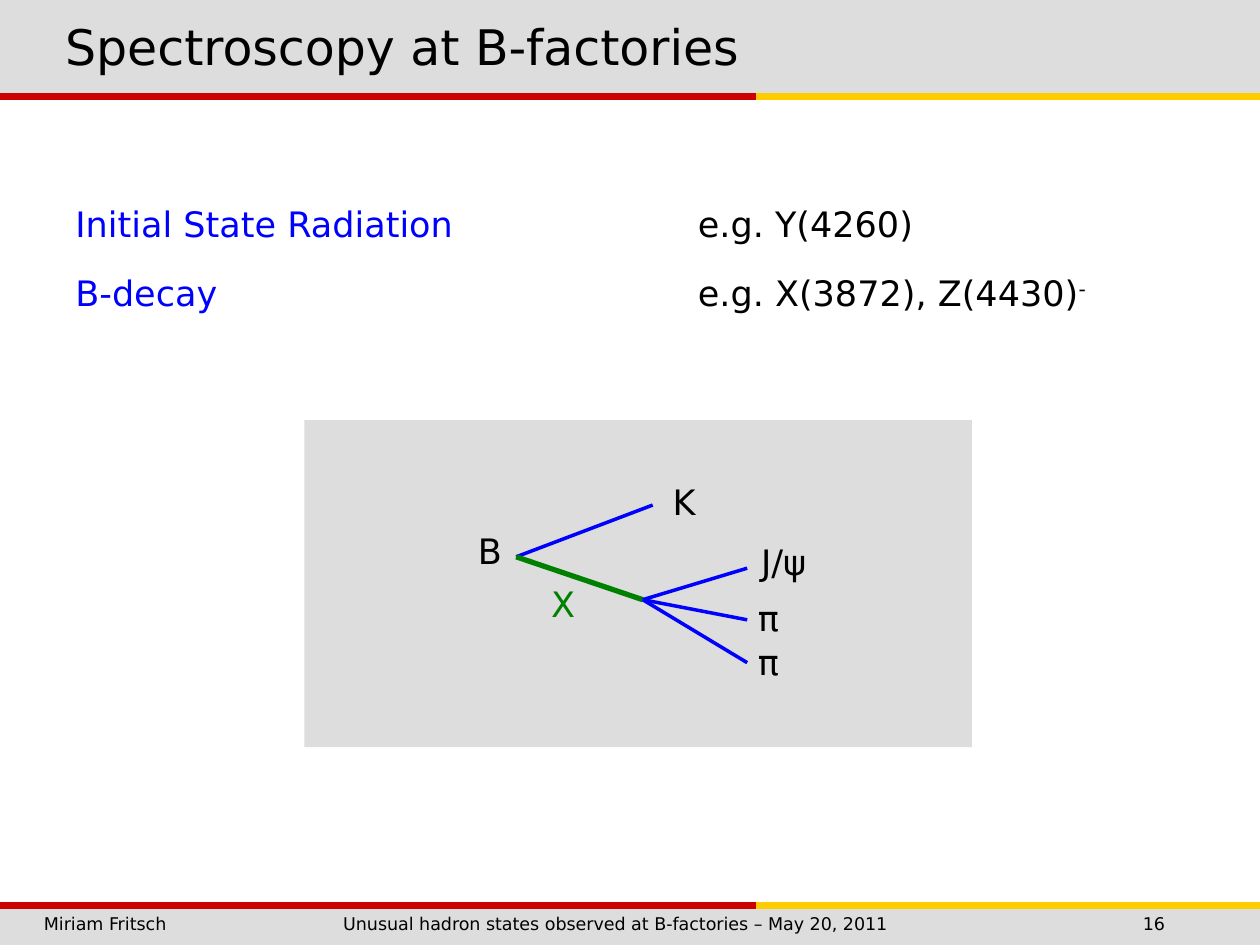
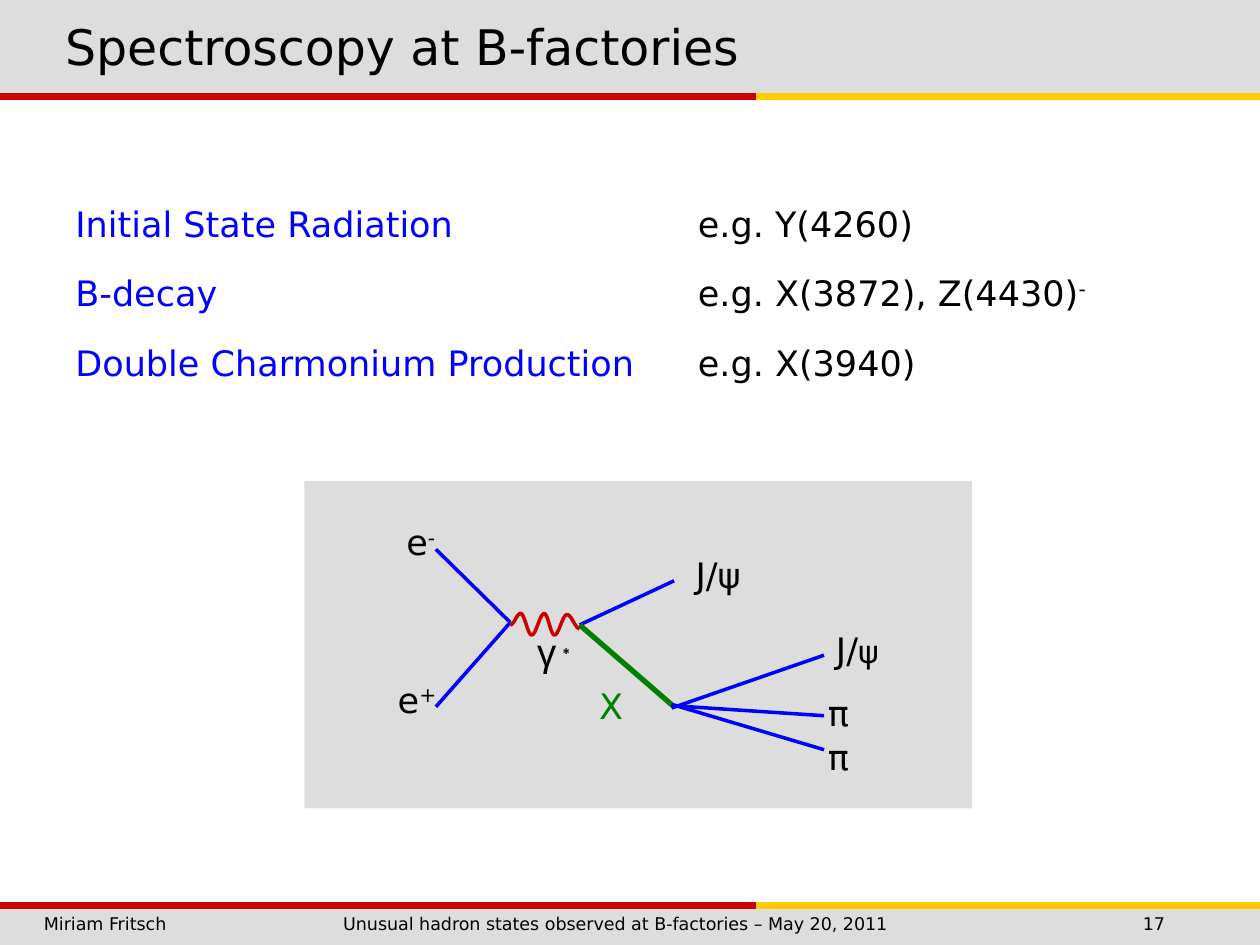
from dataclasses import dataclass
from math import cos, pi

from lxml.etree import SubElement
from pptx import Presentation
from pptx.dml.color import RGBColor
from pptx.enum.shapes import MSO_CONNECTOR, MSO_SHAPE
from pptx.enum.text import MSO_ANCHOR, MSO_AUTO_SIZE, PP_ALIGN
from pptx.oxml.ns import qn
from pptx.util import Pt

COLORS = {
    "band": "DDDDDD",
    "red": "CC0000",
    "yellow": "FFCC00",
    "particle": "0000FF",
    "resonance": "008000",
    "text": "000000",
}
FONT = "DejaVu Sans"
TITLE = "Spectroscopy at B-factories"
AUTHOR = "Miriam Fritsch"
TALK = "Unusual hadron states observed at B-factories – May 20, 2011"
WIDTH, HEIGHT = 720, 540
RED_WIDTH = 432
PROCESSES = [
    ("Initial State Radiation", "e.g. Y(4260)", ""),
    ("B-decay", "e.g. X(3872), Z(4430)", "-"),
    ("Double Charmonium Production", "e.g. X(3940)", ""),
]


@dataclass
class Box:
    left: float
    top: float
    width: float
    height: float

    def lengths(self):
        return Pt(self.left), Pt(self.top), Pt(self.width), Pt(self.height)

    def at(self, point):
        """Turn a point relative to the box into a point on the slide."""
        return Pt(self.left + point[0]), Pt(self.top + point[1])


def color(name):
    return RGBColor.from_string(COLORS[name])


def set_font(font, size, color_name="text", name=FONT):
    font.name = name
    font.size = Pt(size)
    font.color.rgb = color(color_name)


def add_run(paragraph, text, color_name=None, size=None, raised=False):
    run = paragraph.add_run()
    run.text = text
    if color_name:
        run.font.color.rgb = color(color_name)
    if size:
        run.font.size = Pt(size)
    if raised:
        run._r.get_or_add_rPr().set("baseline", "30000")


def add_tabs(paragraph, *positions):
    tab_list = SubElement(paragraph._p.get_or_add_pPr(), qn("a:tabLst"))
    for position in positions:
        SubElement(tab_list, qn("a:tab"), pos=str(Pt(position)), algn="l")


def add_rectangle(shapes, box):
    rectangle = shapes.add_shape(MSO_SHAPE.RECTANGLE, *box.lengths())
    rectangle.shadow.inherit = False
    rectangle.fill.solid()
    rectangle.fill.fore_color.rgb = color("band")
    rectangle.line.fill.background()


def add_line(shapes, box, start, end, color_name="particle", width=2):
    line = shapes.add_connector(MSO_CONNECTOR.STRAIGHT, *box.at(start), *box.at(end))
    line.line.color.rgb = color(color_name)
    line.line.width = Pt(width)
    SubElement(line._element.spPr, qn("a:effectLst"))


def add_resonance(shapes, box, start, end):
    add_line(shapes, box, start, end, "resonance", 3)


def add_wave(shapes, box, turns, steps=10):
    """Draw a photon line that swings smoothly from one turning point to the next."""
    points = [
        box.at((x0 + (x1 - x0) * step / steps,
                y0 + (y1 - y0) * (1 - cos(pi * step / steps)) / 2))
        for (x0, y0), (x1, y1) in zip(turns, turns[1:])
        for step in range(1, steps + 1)
    ]
    builder = shapes.build_freeform(*box.at(turns[0]))
    builder.add_line_segments(points, close=False)
    wave = builder.convert_to_shape()
    wave.shadow.inherit = False
    wave.fill.background()
    wave.line.color.rgb = color("red")
    wave.line.width = Pt(2)


def add_label(shapes, box, center, text, color_name="text", size=20, font=FONT,
              superscript="", small=""):
    """Centre a particle name on a point, with an optional superscript or smaller end."""
    width, height = 42, 29
    left, top = box.at((center[0] - width / 2, center[1] - height / 2))
    frame = shapes.add_textbox(left, top, Pt(width), Pt(height)).text_frame
    frame.word_wrap = False
    frame.vertical_anchor = MSO_ANCHOR.MIDDLE
    paragraph = frame.paragraphs[0]
    paragraph.alignment = PP_ALIGN.CENTER
    set_font(paragraph.font, size, color_name, font)
    add_run(paragraph, text)
    if superscript:
        add_run(paragraph, superscript, size=20, raised=True)
    if small:
        add_run(paragraph, small, size=18)


def add_bands(slide):
    add_rectangle(slide.shapes, Box(0, 518.4, WIDTH, 21.6))
    add_rectangle(slide.shapes, Box(0, 0, WIDTH, 54))
    for y in (55.2, 517.6):
        rule = Box(0, y, WIDTH, 0)
        add_line(slide.shapes, rule, (0, 0), (RED_WIDTH, 0), "red", 4)
        add_line(slide.shapes, rule, (RED_WIDTH, 0), (WIDTH, 0), "yellow", 4)


def add_footer(slide, box, number):
    frame = slide.shapes.add_textbox(*box.lengths()).text_frame
    frame.word_wrap = True
    paragraph = frame.paragraphs[0]
    add_tabs(paragraph, 171, 628)
    set_font(paragraph.font, 10)
    add_run(paragraph, f"{AUTHOR}\t{TALK}\t{number}")


def format_title(slide, box):
    title = slide.shapes.title
    title.left, title.top, title.width, title.height = box.lengths()
    frame = title.text_frame
    frame.text = TITLE
    frame.auto_size = MSO_AUTO_SIZE.NONE
    frame.vertical_anchor = MSO_ANCHOR.MIDDLE
    paragraph = frame.paragraphs[0]
    paragraph.alignment = PP_ALIGN.LEFT
    set_font(paragraph.font, 28)
    # The title has to stand in front of the top band.
    slide.shapes._spTree.append(title._element)


def add_processes(slide, box, processes):
    frame = slide.shapes.add_textbox(*box.lengths()).text_frame
    frame.word_wrap = True
    for index, (process, example, charge) in enumerate(processes):
        paragraph = frame.add_paragraph() if index else frame.paragraphs[0]
        add_tabs(paragraph, 355.7)
        paragraph.line_spacing = 1.2
        paragraph.space_before = Pt(11 if index else 0)
        set_font(paragraph.font, 20)
        add_run(paragraph, f"{process}\t", "particle")
        add_run(paragraph, example)
        if charge:
            add_run(paragraph, charge, raised=True)


def add_b_decay(slide, box):
    add_rectangle(slide.shapes, box)
    shapes = slide.shapes.add_group_shape().shapes
    b_vertex, x_vertex = (121, 78.2), (193.3, 102.7)
    add_line(shapes, box, b_vertex, (199, 48.6))
    add_resonance(shapes, box, b_vertex, x_vertex)
    for y in (84.7, 114.2, 138.7):
        add_line(shapes, box, x_vertex, (253, y))
    add_label(shapes, box, (106, 74.6), "B")
    add_label(shapes, box, (217, 46.6), "K")
    add_label(shapes, box, (147.8, 104.9), "X", "resonance")
    add_label(shapes, box, (273.8, 81.1), "J/ψ")
    for y in (112.8, 138):
        add_label(shapes, box, (265.2, y), "π")


def add_double_charmonium(slide, box):
    add_rectangle(slide.shapes, box)
    shapes = slide.shapes.add_group_shape().shapes
    annihilation, pair_vertex, x_vertex = (117.6, 80.7), (157.2, 82.1), (211.2, 128.9)
    for y in (38.9, 128.9):
        add_line(shapes, box, (75.1, y), annihilation)
    add_line(shapes, box, pair_vertex, (211.2, 56.9))
    add_resonance(shapes, box, pair_vertex, x_vertex)
    add_wave(shapes, box, [(117.6, 82.1), (123.5, 75.5), (129.8, 87.9), (137, 75.6),
                           (142.8, 87.9), (150, 76.2), (157.2, 84.2)])
    for start_y, end_y in ((129.6, 99.4), (128.2, 134), (127.5, 153.4)):
        add_line(shapes, box, (209.8, start_y), (296.9, end_y))
    add_label(shapes, box, (66.5, 34.6), "e", superscript="-")
    add_label(shapes, box, (64.3, 124.6), "e", superscript="+")
    add_label(shapes, box, (144.2, 97.2), "γ", size=22, font="Arial", superscript="∗")
    add_label(shapes, box, (175.2, 128.2), "X", "resonance")
    add_label(shapes, box, (236.4, 53.3), "J/ψ")
    add_label(shapes, box, (316, 96.2), "J/", small="ψ")
    for y in (132.2, 157.4):
        add_label(shapes, box, (305.2, y), "π")


def add_spectroscopy_slide(presentation, number, processes, add_diagram, diagram_top):
    slide = presentation.slides.add_slide(presentation.slide_layouts[5])
    add_bands(slide)
    add_footer(slide, Box(18, 518.4, 702, 19.4), number)
    format_title(slide, Box(30, 2, 660, 48))
    add_diagram(slide, Box(174, diagram_top, 381.5, 187))
    add_processes(slide, Box(36, 107.3, 666, 39 * len(processes)), processes)


def main():
    presentation = Presentation()
    presentation.slide_width, presentation.slide_height = Pt(WIDTH), Pt(HEIGHT)
    add_spectroscopy_slide(presentation, 16, PROCESSES[:2], add_b_decay, 240)
    add_spectroscopy_slide(presentation, 17, PROCESSES, add_double_charmonium, 275)
    presentation.save("out.pptx")


if __name__ == "__main__":
    main()
